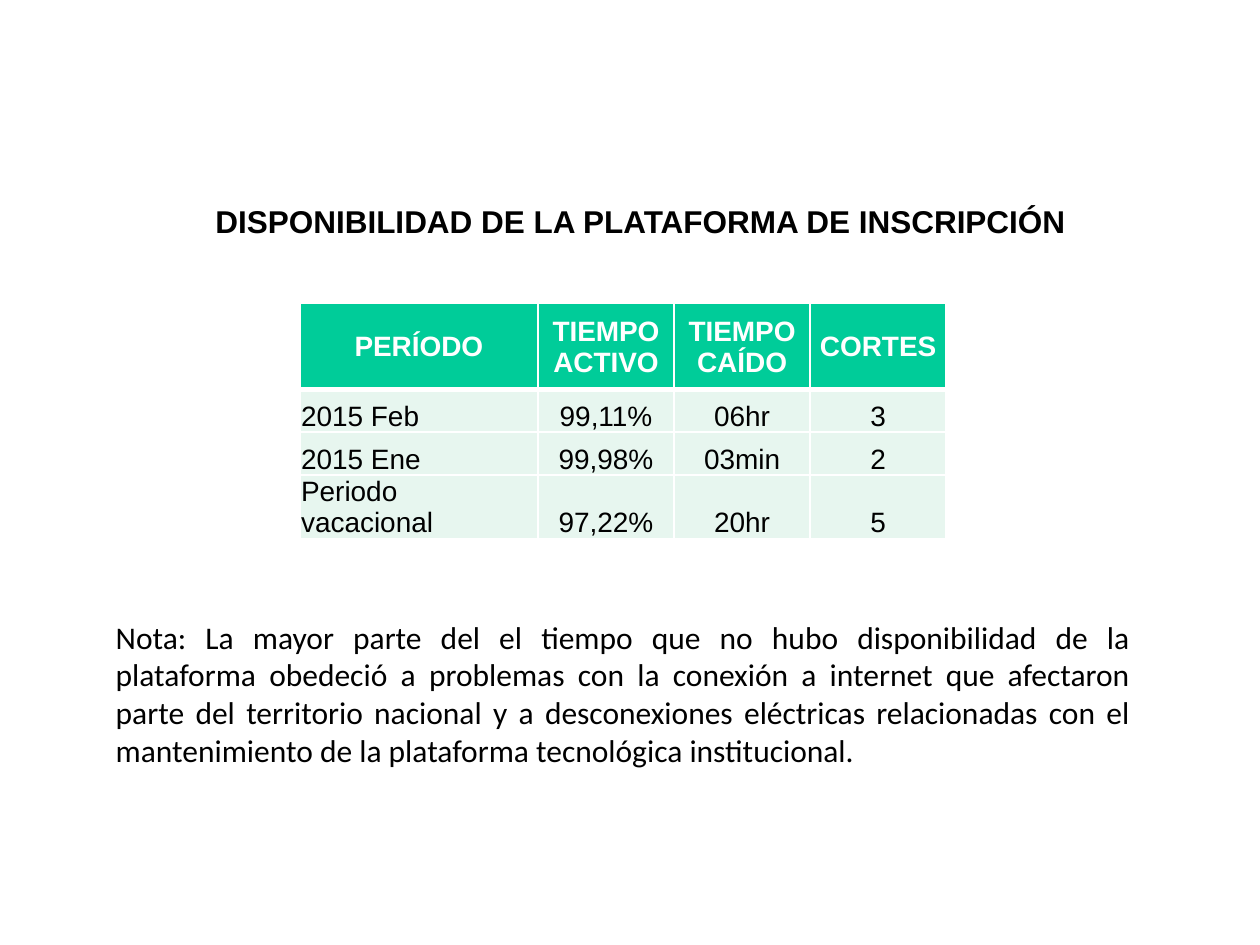
"""Build the slide on the availability of the enrolment platform."""
from typing import NamedTuple

from lxml import etree
from pptx import Presentation
from pptx.dml.color import RGBColor
from pptx.enum.text import MSO_ANCHOR, PP_ALIGN
from pptx.oxml.ns import qn
from pptx.util import Inches, Pt

LEFT, CENTER, JUSTIFY = PP_ALIGN.LEFT, PP_ALIGN.CENTER, PP_ALIGN.JUSTIFY
TOP, MIDDLE, BOTTOM = MSO_ANCHOR.TOP, MSO_ANCHOR.MIDDLE, MSO_ANCHOR.BOTTOM
WIDTH, HEIGHT = Inches(10), Inches(7.5)
WHITE, BLACK, GREEN, MINT = "FFFFFF", "000000", "00CC99", "E7F6EF"


class Style(NamedTuple):
    size: int
    name: str
    color: str
    bold: bool
    align: PP_ALIGN


class RowStyle(NamedTuple):
    fill: str
    color: str
    bold: bool
    anchor: MSO_ANCHOR
    first_align: PP_ALIGN
    bottom: int


HEADER = RowStyle(GREEN, WHITE, True, MIDDLE, CENTER, 3)
BODY = RowStyle(MINT, BLACK, False, BOTTOM, LEFT, 1)
TITLE = "DISPONIBILIDAD DE LA PLATAFORMA DE INSCRIPCIÓN"
NOTE = (
    "Nota: La mayor parte del el tiempo que no hubo disponibilidad de la "
    "plataforma obedeció a problemas con la conexión a internet que afectaron "
    "parte del territorio nacional y a desconexiones eléctricas relacionadas "
    "con el mantenimiento de la plataforma tecnológica institucional."
)
ROWS = [
    ("PERÍODO", "TIEMPO ACTIVO", "TIEMPO CAÍDO", "CORTES"),
    ("2015 Feb", "99,11%", "06hr", "3"),
    ("2015 Ene", "99,98%", "03min", "2"),
    ("Periodo vacacional", "97,22%", "20hr", "5"),
]
COL_WIDTHS = (1.89, 1.08, 1.08, 1.08)
ROW_HEIGHTS = (0.68, 0.34, 0.34, 0.36)


def rgb(color: str) -> RGBColor:
    """Turn a hex string into a colour."""
    return RGBColor.from_string(color)


def place(shape, left: float, top: float, width: float, height: float) -> None:
    """Position a shape by shares of the slide's size."""
    shape.left, shape.top = round(left * WIDTH), round(top * HEIGHT)
    shape.width, shape.height = round(width * WIDTH), round(height * HEIGHT)


def write(tf, text: str, style: Style) -> None:
    """Write one formatted paragraph into a text frame."""
    p = tf.paragraphs[0]
    p.alignment = style.align
    r = p.add_run()
    r.text = text
    values = {"size": Pt(style.size), "name": style.name, "bold": style.bold}
    for key, value in values.items():
        setattr(r.font, key, value)
    r.font.color.rgb = rgb(style.color)


def add_borders(cell, bottom: int, top: int) -> None:
    """Give a cell white borders of the given widths in points."""
    tc_pr = cell._tc.get_or_add_tcPr()
    for side, points in {"L": 1, "R": 1, "T": top, "B": bottom}.items():
        ln = etree.SubElement(tc_pr, qn(f"a:ln{side}"), w=str(Pt(points)))
        fill = etree.SubElement(ln, qn("a:solidFill"))
        etree.SubElement(fill, qn("a:srgbClr"), val=WHITE)


def fill_cell(cell, text: str, row: RowStyle, align: PP_ALIGN, top: int) -> None:
    """Format one table cell and write its text."""
    add_borders(cell, row.bottom, top)
    cell.fill.solid()
    cell.fill.fore_color.rgb = rgb(row.fill)
    values = {
        "margin_left": Inches(0.01), "margin_right": Inches(0.01),
        "margin_top": Inches(0.01), "margin_bottom": 0,
        "vertical_anchor": row.anchor,
    }
    for key, value in values.items():
        setattr(cell, key, value)
    write(cell.text_frame, text, Style(16, "Arial", row.color, row.bold, align))


def add_availability_table(s) -> None:
    """Add the table of uptime, downtime and outages."""
    frame = s.shapes.add_table(
        len(ROWS), len(COL_WIDTHS), Inches(2.38), Inches(2.41),
        Inches(sum(COL_WIDTHS)), Inches(sum(ROW_HEIGHTS)))
    table = frame.table
    for column, width in zip(table.columns, COL_WIDTHS):
        column.width = Inches(width)
    for i, (row, height) in enumerate(zip(table.rows, ROW_HEIGHTS)):
        row.height = Inches(height)
        style = BODY if i else HEADER
        top = HEADER.bottom if i == 1 else 1
        for j, (cell, text) in enumerate(zip(row.cells, ROWS[i])):
            align = CENTER if j else style.first_align
            fill_cell(cell, text, style, align, top)


def main() -> None:
    """Build and save the slide."""
    prs = Presentation()
    prs.slide_width, prs.slide_height = WIDTH, HEIGHT
    s = prs.slides.add_slide(prs.slide_layouts[5])

    title = s.shapes.title
    place(title, 0.161, 0.207, 0.702, 0.053)
    title.text_frame.word_wrap = False
    title.text_frame.vertical_anchor = TOP
    write(title.text_frame, TITLE, Style(18, "Arial", BLACK, True, LEFT))

    add_availability_table(s)

    note = s.shapes.add_textbox(0, 0, 0, 0)
    place(note, 0.082, 0.647, 0.825, 0.175)
    note.text_frame.word_wrap = True
    write(note.text_frame, NOTE, Style(18, "Calibri", BLACK, False, JUSTIFY))

    prs.save("out.pptx")


if __name__ == "__main__":
    main()
